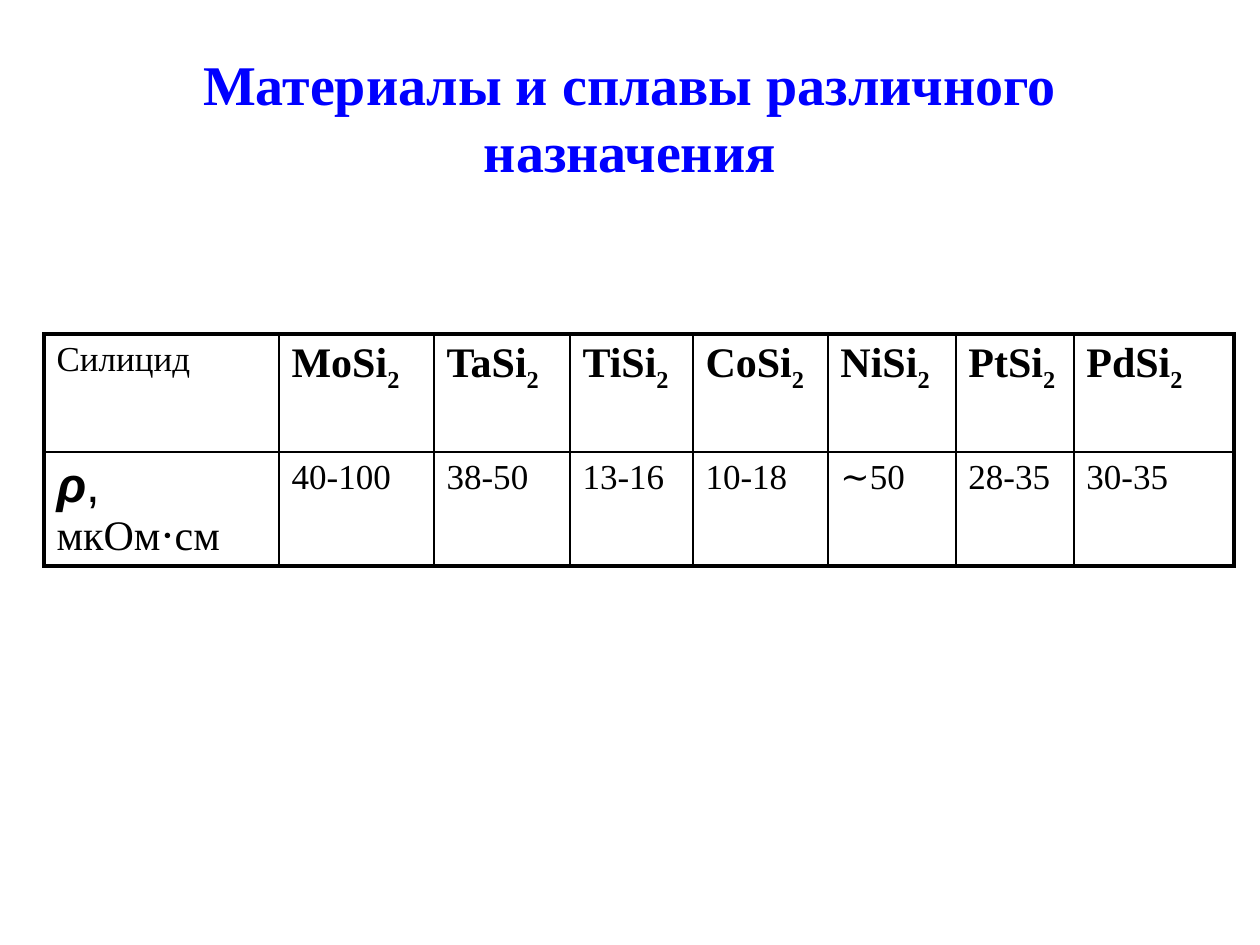
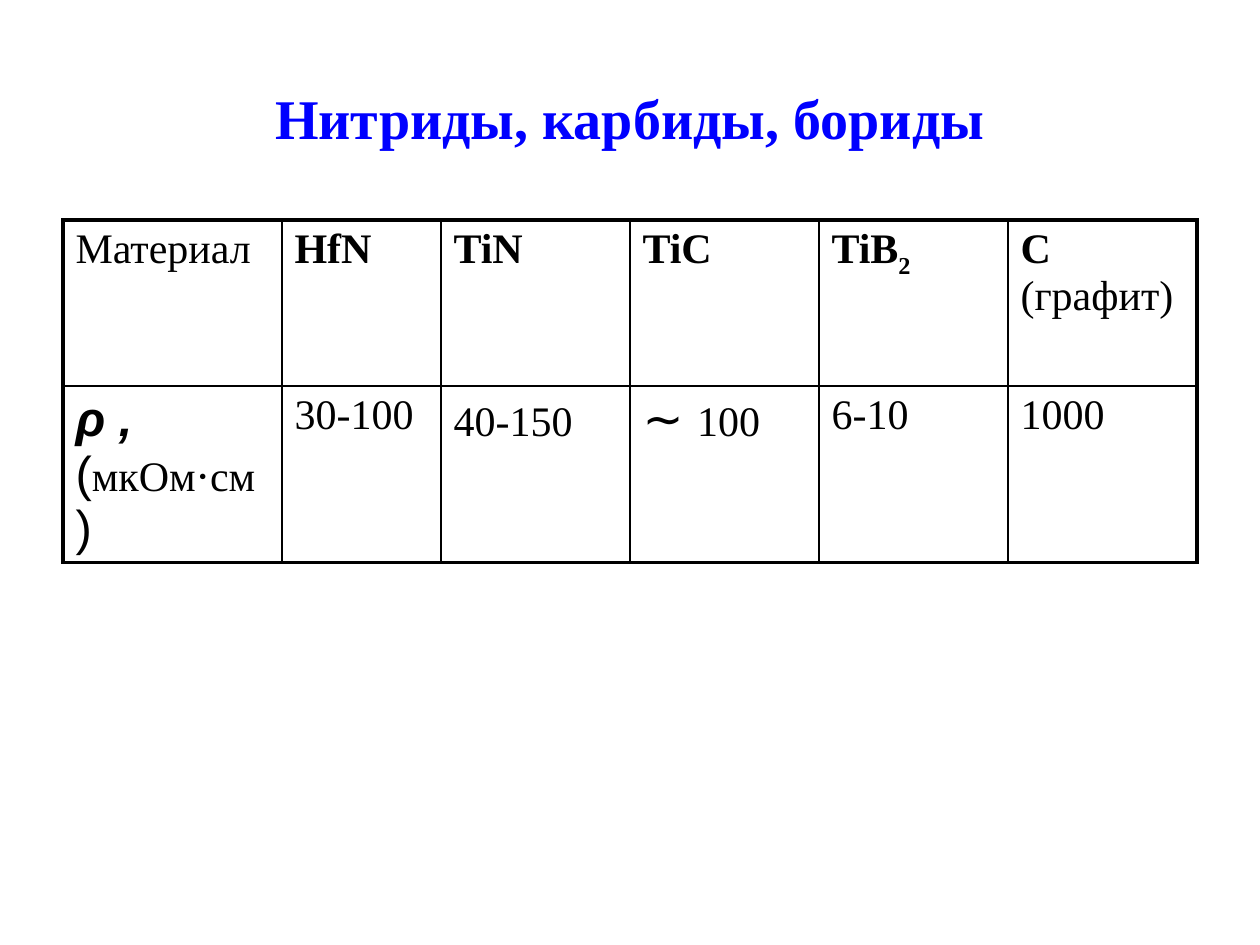
import pptx
import pptx.util
import pptx.dml.color
import pptx.enum.text
import pptx.oxml.ns
import lxml.etree

PX = 914400 / 126
TITLE_BLUE = pptx.dml.color.RGBColor(0x00, 0x00, 0xFF)
BLACK = pptx.dml.color.RGBColor(0x00, 0x00, 0x00)
SERIF = "Times New Roman"
SANS = "Arial"
OUTER_LINE = 2.25
INNER_LINE = 1


def px(length):
    return pptx.util.Emu(round(length * PX))


def add_run(paragraph, text, size, style="", face=SERIF, color=BLACK):
    run = paragraph.add_run()
    run.text = text
    run.font.name = face
    run.font.size = pptx.util.Pt(size)
    run.font.bold = "b" in style
    run.font.italic = "i" in style
    run.font.color.rgb = color
    if "s" in style:
        run._r.get_or_add_rPr().set("baseline", "-25000")


silicide_formulas = [[(metal + "Si", 24, "b"), ("2", 24, "bs")]
                     for metal in ("Mo", "Ta", "Ti", "Co", "Ni", "Pt", "Pd")]
silicide_values = [[(value, 20)] for value in
                   ("40-100", "38-50", "13-16", "10-18", "∼50", "28-35", "30-35")]

pages = [
    {
        "title": "Материалы и сплавы различного назначения",
        "origin": (44, 334),
        "columns": [235, 155, 136, 123, 135, 128, 118, 160],
        "rows": [118, 114],
        "cells": [
            [[("Силицид", 20)]] + silicide_formulas,
            [[("ρ", 28, "bi", SANS), (", ", 28, "", SANS), ("мкОм⋅см", 24)]]
            + silicide_values,
        ],
    },
    {
        "title": "Нитриды, карбиды, бориды",
        "origin": (63, 220),
        "columns": [219, 159] + [189] * 4,
        "rows": [166, 176],
        "cells": [
            [
                [("Материал", 24)],
                [("HfN", 24, "b")],
                [("TiN", 24, "b")],
                [("TiC", 24, "b")],
                [("TiB", 24, "b"), ("2", 24, "bs")],
                [("C ", 24, "b"), ("(графит)", 24)],
            ],
            [
                [("ρ ,", 28, "bi", SANS), ("(", 28, "", SANS),
                 ("мкОм⋅см", 24), (")", 28, "", SANS)],
                [("30-100", 24)],
                [("40-150", 24), (" ", 28, "", SANS)],
                [("∼ ", 28, "", SANS), ("100", 24)],
                [("6-10", 24)],
                [("1000", 24)],
            ],
        ],
    },
]

deck = pptx.Presentation()
deck.slide_width = px(1260)
deck.slide_height = px(945)

for page in pages:
    slide = deck.slides.add_slide(deck.slide_layouts[5])
    title = slide.shapes.title
    title.left, title.top, title.width, title.height = px(63), px(38), px(1134), px(158)
    title.text_frame.word_wrap = True
    title.text_frame.auto_size = pptx.enum.text.MSO_AUTO_SIZE.NONE
    title.text_frame.vertical_anchor = pptx.enum.text.MSO_ANCHOR.MIDDLE
    heading = title.text_frame.paragraphs[0]
    heading.alignment = pptx.enum.text.PP_ALIGN.CENTER
    add_run(heading, page["title"], 32, "b", color=TITLE_BLUE)

    left, top = page["origin"]
    columns, rows = page["columns"], page["rows"]
    resistivity = slide.shapes.add_table(
        len(rows), len(columns), px(left), px(top), px(sum(columns)), px(sum(rows))
    ).table
    resistivity.first_row = False
    resistivity.horz_banding = False
    for column, width in zip(resistivity.columns, columns):
        column.width = px(width)
    for row, height in zip(resistivity.rows, rows):
        row.height = px(height)

    for r, row_cells in enumerate(page["cells"]):
        for c, runs in enumerate(row_cells):
            cell = resistivity.cell(r, c)
            for run in runs:
                add_run(cell.text_frame.paragraphs[0], *run)
            outer_sides = {
                "lnL": c == 0,
                "lnR": c == len(columns) - 1,
                "lnT": r == 0,
                "lnB": r == len(rows) - 1,
            }
            properties = cell._tc.get_or_add_tcPr()
            for side, is_outer in outer_sides.items():
                border = lxml.etree.SubElement(properties, pptx.oxml.ns.qn("a:" + side))
                border.set("w", str(pptx.util.Pt(OUTER_LINE if is_outer else INNER_LINE)))
                fill = lxml.etree.SubElement(border, pptx.oxml.ns.qn("a:solidFill"))
                color = lxml.etree.SubElement(fill, pptx.oxml.ns.qn("a:srgbClr"))
                color.set("val", str(BLACK))
            cell.fill.background()

deck.save("out.pptx")
